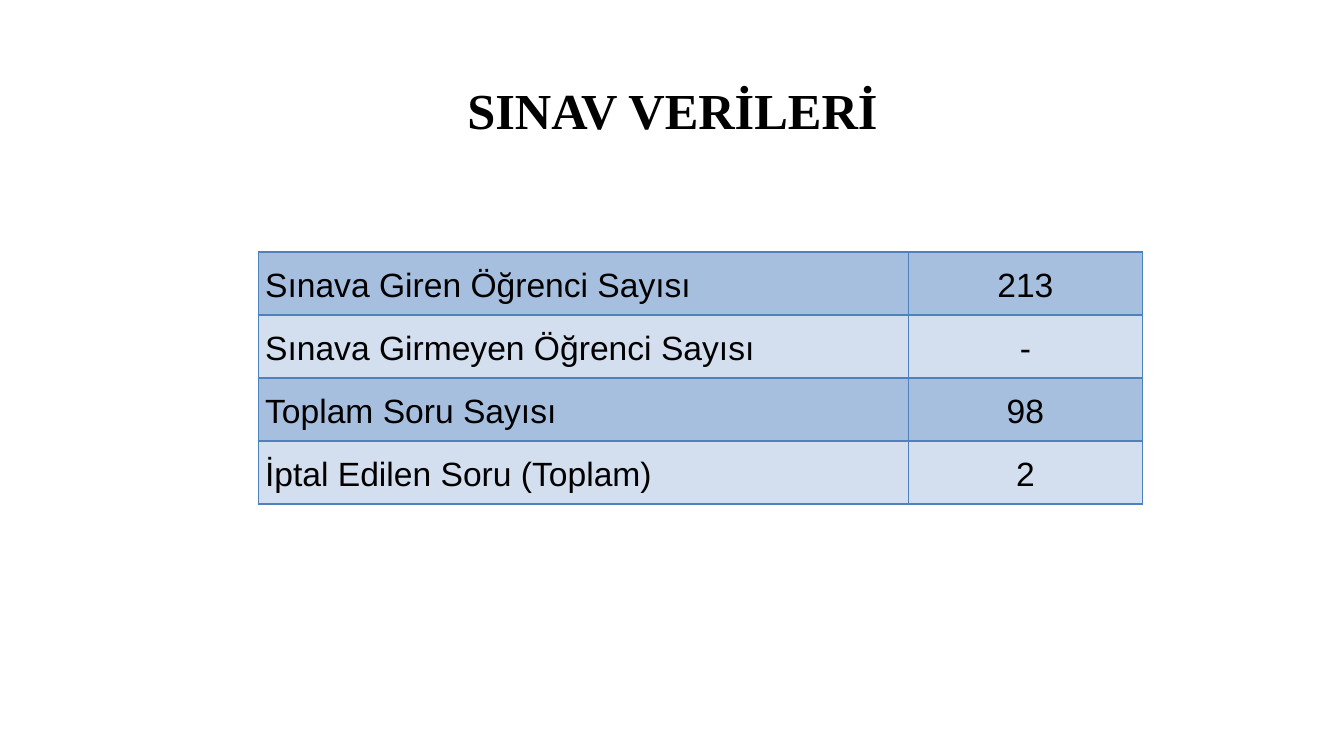
from dataclasses import dataclass

from lxml.etree import SubElement
from pptx import Presentation
from pptx.dml.color import RGBColor
from pptx.enum.text import MSO_ANCHOR as Anchor, PP_ALIGN as Align
from pptx.oxml.ns import qn
from pptx.util import Inches, Pt

TITLE = "SINAV VERİLERİ"
EXAM_ROWS = [
    ("Sınava Giren Öğrenci Sayısı", "213"),
    ("Sınava Girmeyen Öğrenci Sayısı", "-"),
    ("Toplam Soru Sayısı", "98"),
    ("İptal Edilen Soru (Toplam)", "2"),
]
COLUMN_WIDTHS = (6.45, 2.32)
COLUMN_ALIGNS = (Align.LEFT, Align.CENTER)
TABLE_LEFT, TABLE_TOP, TABLE_HEIGHT = 2.56, 2.5, 2.5


@dataclass(frozen=True)
class Theme:
    text: str = "000000"
    border: str = "4F81BD"
    bands: tuple = ("A7BFDE", "D3DFEE")
    title_font: str = "Times New Roman"
    body_font: str = "Arial"
    title_size: int = 36
    body_size: int = 24
    border_width: int = 1


THEME = Theme()


def write_text(frame, text, *, font, size, align, spacing, bold=False):
    frame.word_wrap = True
    para = frame.paragraphs[0]
    para.alignment = align
    para.line_spacing = spacing
    span = para.add_run()
    span.text = text
    span.font.name = font
    span.font.size = Pt(size)
    span.font.bold = bold
    span.font.color.rgb = RGBColor.from_string(THEME.text)


def add_borders(cell):
    properties = cell._tc.get_or_add_tcPr()
    for side in ("a:lnL", "a:lnR", "a:lnT", "a:lnB"):
        line = SubElement(properties, qn(side), w=str(Pt(THEME.border_width)))
        fill = SubElement(line, qn("a:solidFill"))
        SubElement(fill, qn("a:srgbClr"), val=THEME.border)


def format_cell(cell, text, band, align):
    cell.margin_left = cell.margin_right = Inches(0.07)
    cell.margin_top = cell.margin_bottom = 0
    cell.vertical_anchor = Anchor.MIDDLE
    add_borders(cell)
    cell.fill.solid()
    cell.fill.fore_color.rgb = RGBColor.from_string(band)
    write_text(cell.text_frame, text, font=THEME.body_font,
               size=THEME.body_size, align=align, spacing=1.15)


def add_title(page):
    title = page.shapes.title
    title.left, title.top = Inches(0.92), Inches(0.4)
    title.width, title.height = Inches(11.5), Inches(1.45)
    title.text_frame.vertical_anchor = Anchor.MIDDLE
    write_text(title.text_frame, TITLE, font=THEME.title_font,
               size=THEME.title_size, align=Align.CENTER, spacing=0.9, bold=True)


def add_exam_table(page):
    table = page.shapes.add_table(
        len(EXAM_ROWS), len(COLUMN_WIDTHS), Inches(TABLE_LEFT), Inches(TABLE_TOP),
        Inches(sum(COLUMN_WIDTHS)), Inches(TABLE_HEIGHT)).table
    table.first_row = table.horz_banding = False
    for column, width in zip(table.columns, COLUMN_WIDTHS):
        column.width = Inches(width)
    for row_index, values in enumerate(EXAM_ROWS):
        band = THEME.bands[row_index % len(THEME.bands)]
        for column_index, (text, align) in enumerate(zip(values, COLUMN_ALIGNS)):
            format_cell(table.cell(row_index, column_index), text, band, align)


def main():
    deck = Presentation()
    deck.slide_width, deck.slide_height = Inches(13.33), Inches(7.5)
    page = deck.slides.add_slide(deck.slide_layouts[5])
    add_title(page)
    add_exam_table(page)
    deck.save("out.pptx")


if __name__ == "__main__":
    main()
